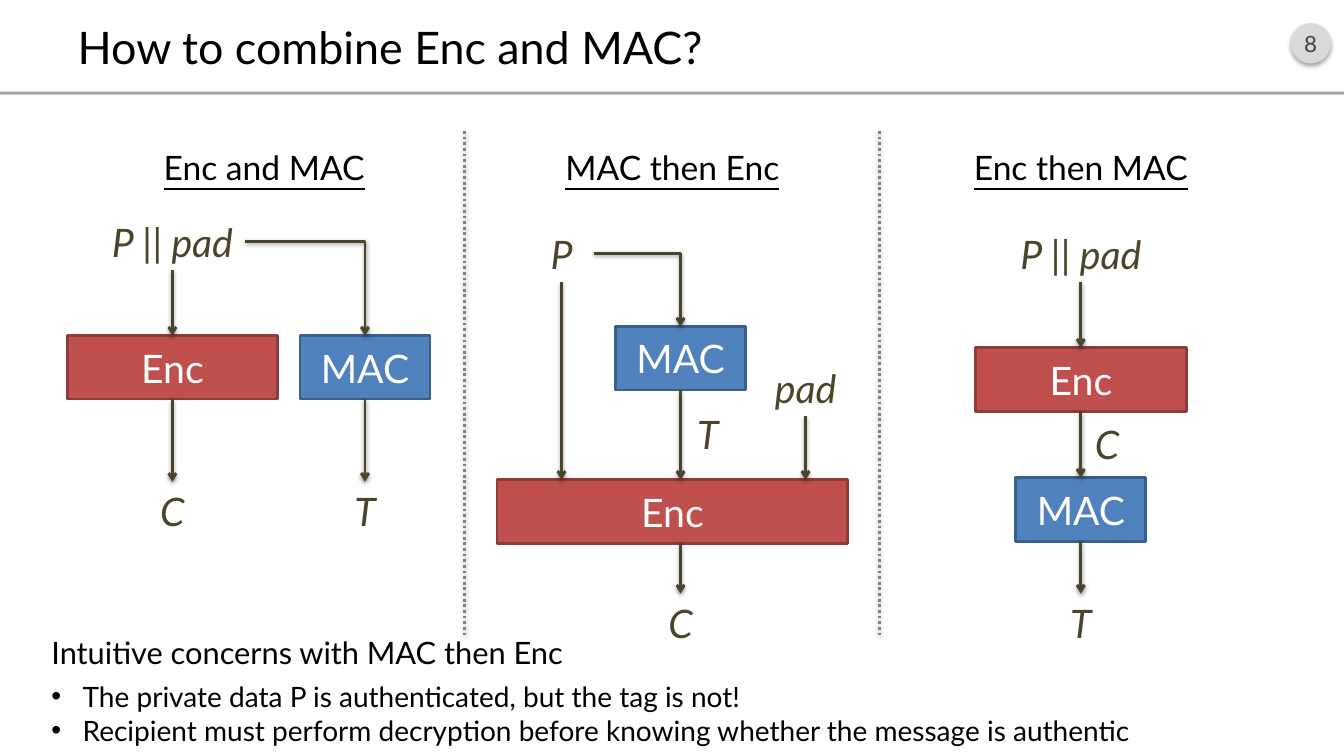
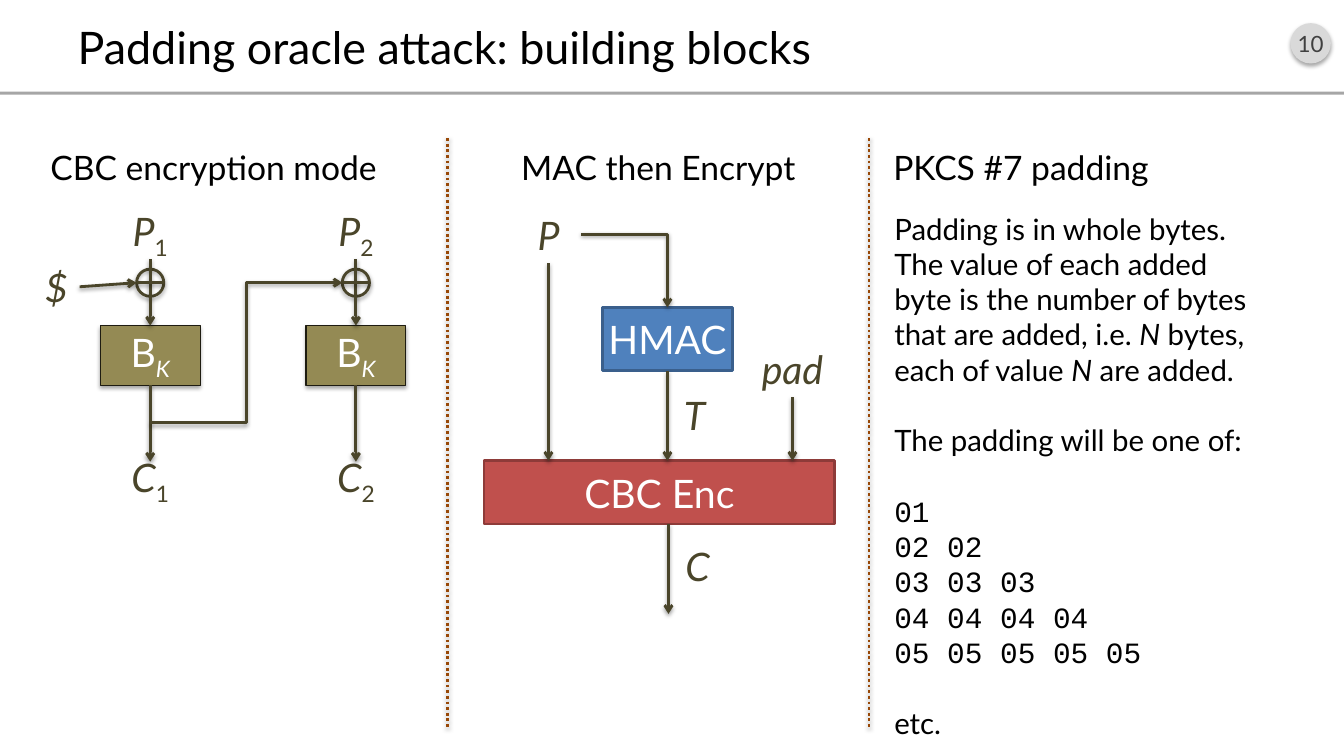
"""Build two slides on combining encryption with authentication."""
import pptx
import pptx.util
import pptx.dml.color
import pptx.enum.dml
import pptx.enum.shapes
import pptx.enum.text
import pptx.oxml
import pptx.oxml.ns

Inches, Pt = pptx.util.Inches, pptx.util.Pt
SHAPES = pptx.enum.shapes.MSO_SHAPE
LINES = pptx.enum.shapes.MSO_CONNECTOR
ALIGN = pptx.enum.text.PP_ALIGN
ANCHOR = pptx.enum.text.MSO_ANCHOR

COLORS = {
    "text": "000000", "label": "4A452A", "white": "FFFFFF", "number": "404040",
    "badge": "D9D9D9", "bar": "A6A6A6", "gray": "808080", "brown": "984807",
    "enc": "C0504D", "enc_edge": "8E3B39", "mac": "4F81BD", "mac_edge": "3A5F8C",
    "block": "948A54", "block_edge": "1E1C11",
}
FONT, MONO = "Lato", "Courier New"
WIDTH, HEIGHT = 13.33, 7.5
COLUMN = 3.9
BOTTOM, TOP, LEFT, RIGHT = 2, 0, 1, 3

STYLES = {
    "enc": (SHAPES.RECTANGLE, "enc", "enc_edge", 2, False),
    "mac": (SHAPES.RECTANGLE, "mac", "mac_edge", 2, False),
    "block": (SHAPES.RECTANGLE, "block", "block_edge", 0.75, True),
    "xor": (SHAPES.OVAL, None, "label", 2, True),
    "badge": (SHAPES.OVAL, "badge", None, 0, True),
    "bar": (SHAPES.RECTANGLE, "bar", None, 0, False),
}


def label(text, x, y, width=0.65, height=0.57):
    """Describe an italic label by its centre x and top."""
    return "label", [(text, "i")], x, y, width, height


def mac_then_enc(mac, enc, output):
    """Describe the MAC-then-encrypt diagram relative to its input."""
    return {
        "P": label("P", 0, 0),
        "MAC": ("mac", [(mac, "")], 1.18, 1.01, 1.29, 0.63),
        "Enc": ("enc", [(enc, "")], 1.1, 2.53, 3.48, 0.63),
        "T": label("T", 1.45, 1.79),
        "pad": label("pad", 2.42, 1.33, 0.84),
        "C": output,
    }


def cbc_mode(centres):
    """Describe the chained blocks, one column per centre."""
    nodes = {"$": label("$", -0.93, 0.51, 0.46, 0.53)}
    for number, x in enumerate(centres, 1):
        nodes[f"P{number}"] = "label", [("P", "i"), (str(number), "s")], x, 0, 0.6, 0.5
        nodes[f"B{number}"] = "block", [("B", ""), ("K", "is")], x, 1.16, 0.99, 0.59
        nodes[f"C{number}"] = "label", [("C", "i"), (str(number), "s")], x, 2.51, 0.6, 0.37
        nodes[f"X{number}"] = "xor", [], x, 0.6, 0.27, 0.27
    return nodes


MAC_LINKS = [("P", "Enc"), ("MAC", "Enc"), ("pad", "Enc")]
SLIDES = [
    {
        "number": 8, "title": "How to combine Enc and MAC?",
        "headings": ["Enc and MAC", "MAC then Enc", "Enc then MAC"],
        "aligns": [ALIGN.CENTER] * 3, "heading_style": "u", "first": 0.67, "step": 4.05,
        "dividers": ([4.61, 8.72], 1.3, 6.3, "gray"),
        "flows": [
            {"origin": (1.71, 2.11),
             "nodes": {
                 "P": label("P || pad", 0, 0, 1.45),
                 "MAC": ("mac", [("MAC", "")], 1.91, 1.22, 1.29, 0.63),
                 "Enc": ("enc", [("Enc", "")], 0, 1.22, 2.08, 0.63),
                 "T": label("T", 1.91, 2.67), "C": label("C", 0, 2.67)},
             "links": [("P", "Enc"), ("Enc", "C"), ("MAC", "T")], "bends": [("P", "MAC")]},
            {"origin": (5.57, 2.23),
             "nodes": mac_then_enc("MAC", "Enc", label("C", 1.18, 3.66)),
             "links": MAC_LINKS + [("Enc", "C")], "bends": [("P", "MAC")]},
            {"origin": (10.72, 2.23),
             "nodes": {
                 "P": label("P || pad", 0, 0, 1.5),
                 "Enc": ("enc", [("Enc", "")], 0, 1.22, 2.09, 0.63),
                 "C": label("C", 0.26, 1.89),
                 "MAC": ("mac", [("MAC", "")], 0, 2.51, 1.29, 0.63),
                 "T": label("T", 0, 3.66)},
             "links": [("P", "Enc"), ("Enc", "MAC"), ("MAC", "T")], "bends": []},
        ],
        "body_at": (0.41, 6.24, 11.01, 1.23),
        "body": [
            {"runs": [("Intuitive concerns with MAC then Enc", "")], "size": 22, "after": 6},
            {"runs": [("The private data P is authenticated, but the tag is not!", "")],
             "size": 20, "bullet": True},
            {"runs": [("Recipient must perform decryption before knowing whether "
                       "the message is authentic", "")], "size": 20, "bullet": True},
        ],
    },
    {
        "number": 10, "title": "Padding oracle attack: building blocks",
        "headings": ["CBC encryption mode", "MAC then Encrypt", "PKCS #7 padding"],
        "aligns": [ALIGN.LEFT, ALIGN.CENTER, ALIGN.LEFT], "heading_style": "",
        "first": 0.4, "step": 4.18,
        "dividers": ([4.44, 8.62], 1.37, 7.23, "brown"),
        "flows": [
            {"origin": (1.49, 2.07), "nodes": cbc_mode([0, 2.04]),
             "links": [("P1", "B1"), ("B1", "C1"), ("P2", "B2"), ("B2", "C2")],
             "bends": [], "chain": True},
            {"origin": (5.44, 2.04),
             "nodes": mac_then_enc("HMAC", "CBC Enc", label("C", 1.48, 3.29)),
             "links": MAC_LINKS, "bends": [("P", "MAC")], "exit": (1.19, 3.16, 4.05)},
        ],
        "body_at": (8.77, 2.04, 3.9, 5.4),
        "body": [
            {"runs": [("Padding is in whole bytes. The value of each added byte is the number "
                       "of bytes that are added, i.e. ", ""), ("N", "i"),
                      (" bytes, each of value ", ""), ("N", "i"), (" are added.", "")],
             "size": 21, "line": 25.2},
            {"runs": [("The padding will be one of:", "")], "size": 21, "line": 25.2,
             "before": 25.2},
            *({"runs": [(" ".join([f"{count:02d}"] * count), "m")], "size": 21, "line": 25.2,
               "before": 25.2 if count == 1 else 0} for count in range(1, 6)),
            {"runs": [("etc.", "")], "size": 21, "line": 25.2, "before": 25.2},
        ],
    },
]


def rgb(name):
    """Return a named colour."""
    return pptx.dml.color.RGBColor.from_string(COLORS[name])


def xml(markup):
    """Parse a DrawingML fragment."""
    return pptx.oxml.parse_xml(markup.replace("@", pptx.oxml.ns.nsdecls("a"), 1))


def cast_shadow(item, alpha, distance):
    """Give a shape or connector a soft shadow straight below."""
    item.element.spPr.append(xml(
        f'<a:effectLst @><a:outerShdw blurRad="{Pt(3.1)}" dist="{Pt(distance)}" dir="5400000" '
        f'rotWithShape="0"><a:srgbClr val="000000"><a:alpha val="{alpha}000"/></a:srgbClr>'
        '</a:outerShdw></a:effectLst>'))


def write(para, runs, size, color="text", align=ALIGN.LEFT):
    """Write runs; style letters are i(talic), u(nderline), s(ubscript), m(ono)."""
    para.alignment = align
    for text, style in runs:
        span = para.add_run()
        span.text = text
        font = span.font
        font.name = MONO if "m" in style else FONT
        font.size, font.bold = Pt(size), False
        font.italic, font.underline = "i" in style, "u" in style
        font.color.rgb = rgb(color)
        if "s" in style:
            span._r.get_or_add_rPr().set("baseline", "-25000")


def prepare(frame, anchor, inset=0.0):
    """Set wrapping, anchor and side insets of a text frame."""
    frame.word_wrap = True
    frame.auto_size = pptx.enum.text.MSO_AUTO_SIZE.NONE
    frame.vertical_anchor = anchor
    frame.margin_left = frame.margin_right = Inches(inset)
    frame.margin_top = frame.margin_bottom = Inches(inset / 2)


def place(shape, left, top, width, height):
    """Move and size a placeholder."""
    shape.left, shape.top = Inches(left), Inches(top)
    shape.width, shape.height = Inches(width), Inches(height)


def add_node(page, kind, runs, x, y, width, height, size=28, color=None):
    """Add a styled shape or label centred on x with its top at y."""
    area = [Inches(value) for value in (x - width / 2, y, width, height)]
    if kind == "label":
        box = page.shapes.add_textbox(*area)
    else:
        preset, fill, edge, weight, shaded = STYLES[kind]
        box = page.shapes.add_shape(preset, *area)
        box.shadow.inherit = False
        if fill:
            box.fill.solid()
            box.fill.fore_color.rgb = rgb(fill)
        else:
            box.fill.background()
        if edge:
            box.line.color.rgb = rgb(edge)
            box.line.width = Pt(weight)
        else:
            box.line.fill.background()
        if shaded:
            box.element.spPr.remove(box.element.spPr.find(pptx.oxml.ns.qn("a:effectLst")))
            cast_shadow(box, 35, 1.8)
    prepare(box.text_frame, ANCHOR.MIDDLE)
    color = color or ("label" if kind == "label" else "white")
    write(box.text_frame.paragraphs[0], runs, size, color, ALIGN.CENTER)
    return box


def add_line(page, start, end, color="label", arrow=True, kind=LINES.STRAIGHT):
    """Add a shadowed line between two points given in EMU."""
    line = page.shapes.add_connector(kind, *start, *end)
    line.line.color.rgb = rgb(color)
    line.line.width = Pt(2)
    if arrow:
        line.line._get_or_add_ln().append(xml('<a:tailEnd @ type="arrow"/>'))
    cast_shadow(line, 38, 1.6)
    return line


def centre(box):
    """Return the centre of a box."""
    return box.left + box.width // 2, box.top + box.height // 2


def add_link(page, source, target):
    """Join two boxes vertically at the centre of the narrower one."""
    x = centre(min(source, target, key=lambda box: box.width))[0]
    line = add_line(page, (x, source.top + source.height), (x, target.top))
    if abs(centre(source)[0] - x) < Inches(0.01):
        line.begin_connect(source, BOTTOM)
    if abs(centre(target)[0] - x) < Inches(0.01):
        line.end_connect(target, TOP)


def add_bend(page, source, target):
    """Run from the right of one box to the top of another."""
    line = add_line(page, (source.left + source.width, centre(source)[1]),
                    (centre(target)[0], target.top), kind=LINES.ELBOW)
    line.element.spPr.prstGeom.set("prst", "bentConnector2")
    line.begin_connect(source, RIGHT)
    line.end_connect(target, TOP)


def add_chain(page, boxes):
    """Cross the XOR circles and feed them from the left."""
    for circle in (boxes["X1"], boxes["X2"]):
        y = centre(circle)[1]
        add_line(page, (circle.left, y), (circle.left + circle.width, y), arrow=False)
    seed, first, second = boxes["$"], boxes["X1"], boxes["X2"]
    y = centre(first)[1]
    feed = add_line(page, (seed.left + seed.width, y), (first.left, y))
    feed.begin_connect(seed, RIGHT)
    tap = (centre(boxes["B1"])[0], Inches(4.19))
    add_line(page, tap, (second.left, centre(second)[1]), kind=LINES.ELBOW)


def add_flow(page, flow):
    """Draw one diagram from its nodes and links."""
    left, top = flow["origin"]
    boxes = {name: add_node(page, kind, runs, left + x, top + y, width, height)
             for name, (kind, runs, x, y, width, height) in flow["nodes"].items()}
    for source, target in flow["links"]:
        add_link(page, boxes[source], boxes[target])
    for source, target in flow["bends"]:
        add_bend(page, boxes[source], boxes[target])
    if "chain" in flow:
        add_chain(page, boxes)
    if "exit" in flow:
        x, start, end = flow["exit"]
        add_line(page, (Inches(left + x), Inches(top + start)),
                 (Inches(left + x), Inches(top + end)))


def add_body(shape, paragraphs):
    """Fill the body placeholder with spaced, optionally bulleted paragraphs."""
    prepare(shape.text_frame, ANCHOR.TOP, 0.1)
    for index, item in enumerate(paragraphs):
        para = shape.text_frame.add_paragraph() if index else shape.text_frame.paragraphs[0]
        write(para, item["runs"], item["size"])
        para.space_before, para.space_after = Pt(item.get("before", 0)), Pt(item.get("after", 0))
        if "line" in item:
            para.line_spacing = Pt(item["line"])
        set_bullet(para, item.get("bullet", False))


def set_bullet(para, shown):
    """Turn the bullet of a paragraph on or off."""
    props = para._p.get_or_add_pPr()
    indent = Inches(0.31) if shown else 0
    props.set("marL", str(indent))
    props.set("indent", str(-indent))
    props.append(xml('<a:buChar @ char="•"/>' if shown else '<a:buNone @/>'))


def add_page(deck, layout, content):
    """Build one slide."""
    page = deck.slides.add_slide(layout)
    prepare(page.shapes.title.text_frame, ANCHOR.MIDDLE, 0.1)
    write(page.shapes.title.text_frame.paragraphs[0], [(content["title"], "")], 32)
    add_node(page, "badge", [(str(content["number"]), "")], 13, 0.23, 0.4, 0.4, 16, "number")
    for index, slot in enumerate((1, 3, 4)):
        heading = page.placeholders[slot]
        place(heading, content["first"] + index * content["step"], 1.21, COLUMN, 0.7)
        prepare(heading.text_frame, ANCHOR.BOTTOM, 0.1)
        para = heading.text_frame.paragraphs[0]
        write(para, [(content["headings"][index], content["heading_style"])], 24,
              align=content["aligns"][index])
        para.space_before = Pt(8)
        set_bullet(para, False)
    for flow in content["flows"]:
        add_flow(page, flow)
    positions, top, bottom, color = content["dividers"]
    for x in positions:
        divider = add_line(page, (Inches(x), Inches(top)), (Inches(x), Inches(bottom)),
                           color, arrow=False)
        divider.line.dash_style = pptx.enum.dml.MSO_LINE.ROUND_DOT
    place(page.placeholders[2], *content["body_at"])
    add_body(page.placeholders[2], content["body"])
    return page


def main():
    """Assemble and save the deck."""
    deck = pptx.Presentation()
    deck.slide_width, deck.slide_height = Inches(WIDTH), Inches(HEIGHT)
    layout = deck.slide_layouts.get_by_name("Comparison")
    place(layout.placeholders[0], 0.67, 0.16, 12, 0.6)
    pages = [add_page(deck, layout, content) for content in SLIDES]
    bar = add_node(pages[0], "bar", [], WIDTH / 2, 0.91, WIDTH, 0.03)
    bar.element.nvSpPr.cNvPr.set("id", "20")
    layout.element.cSld.spTree.append(bar.element)
    deck.save("out.pptx")


if __name__ == "__main__":
    main()
